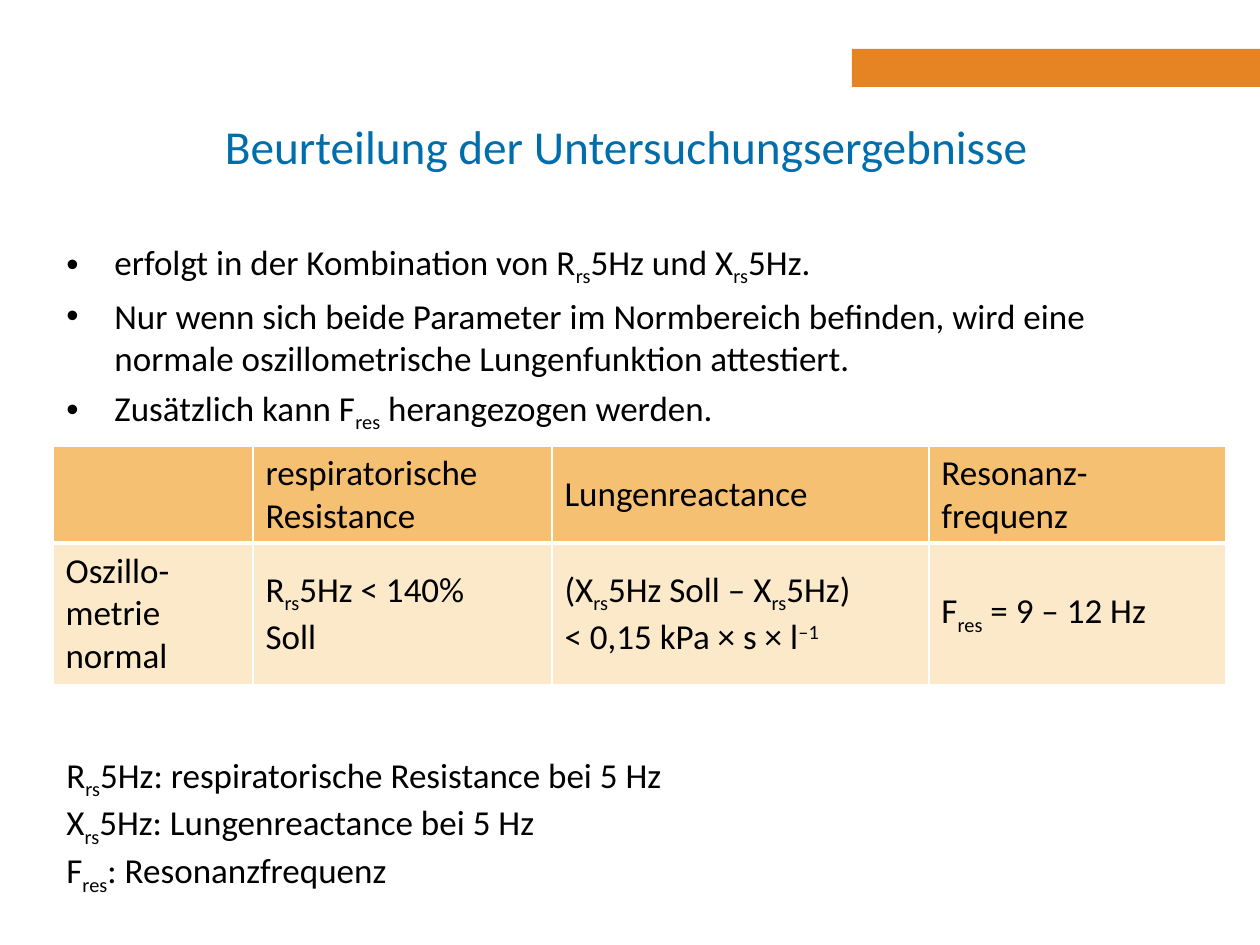
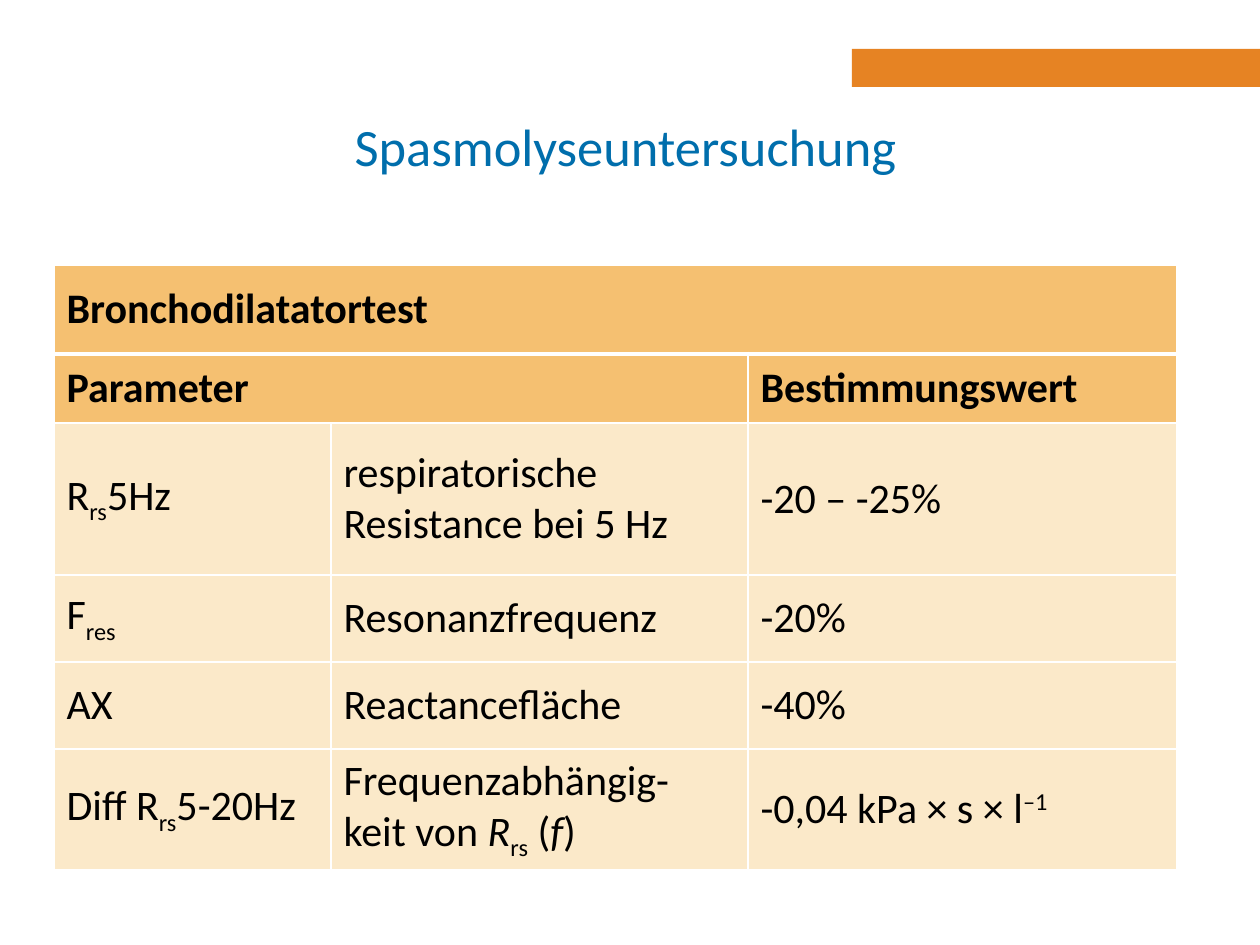
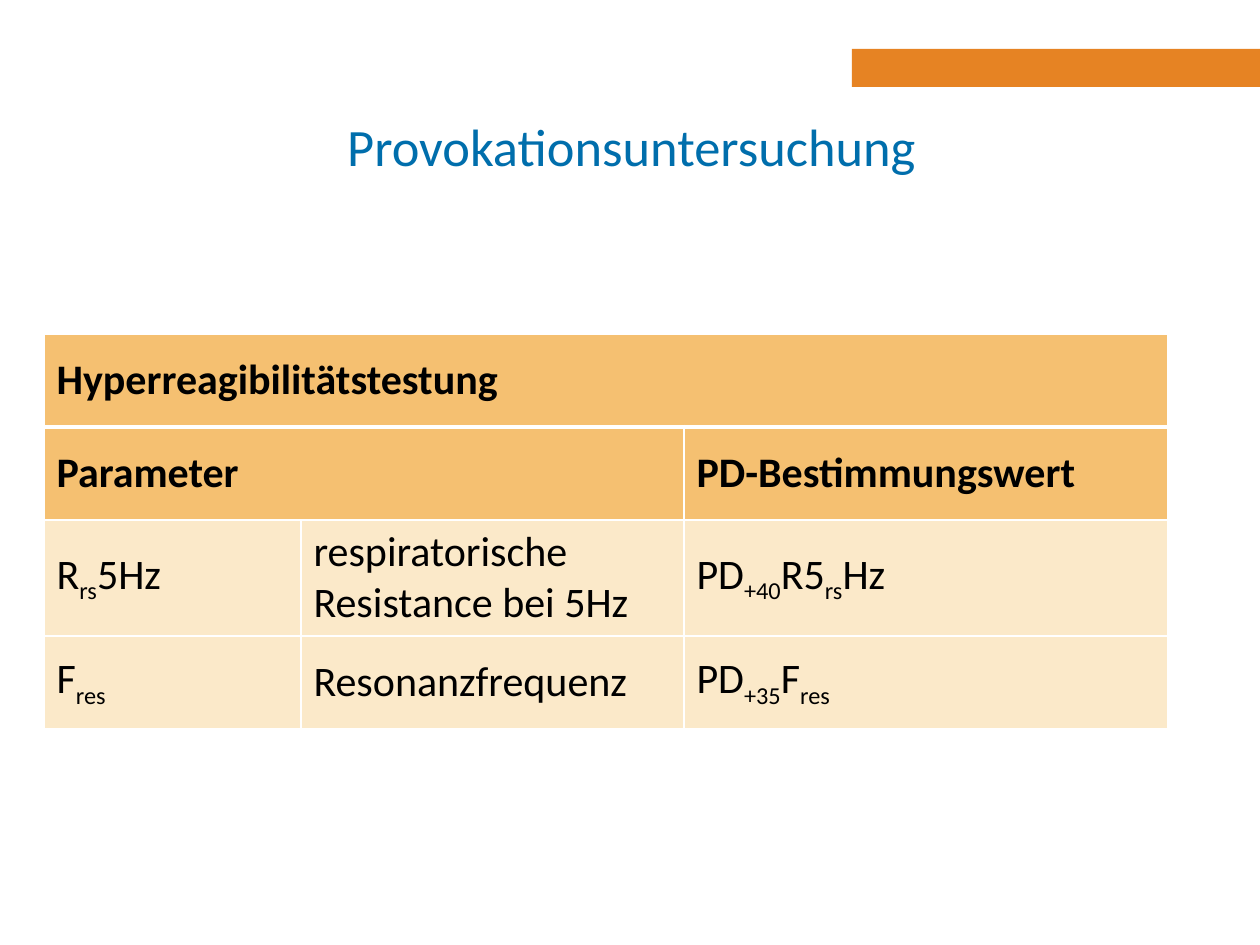
from itertools import product

from pptx import Presentation
from pptx.dml.color import RGBColor
from pptx.enum.shapes import MSO_SHAPE
from pptx.enum.text import MSO_ANCHOR, PP_ALIGN
from pptx.oxml import parse_xml
from pptx.oxml.ns import nsdecls
from pptx.util import Pt

EMU_PER_PX = 914400 / 126
FONT = "Calibri"
ORANGE, BLUE, BLACK, WHITE = "E68323", "006EAC", "000000", "FFFFFF"
HEADER_FILL, BODY_FILL = "F5C071", "FBE9C9"
SUBSCRIPT, SUPERSCRIPT, ITALIC = "~", "^", "*"
BASELINES = {SUBSCRIPT: "-25000", SUPERSCRIPT: "30000"}
BULLET_INDENT = 48
CELL_RIGHT_MARGIN = 54


def px(length):
    return round(length * EMU_PER_PX)


def color(hex_string):
    return RGBColor.from_string(hex_string)


def add_runs(paragraph, text):
    for mark in (SUBSCRIPT, SUPERSCRIPT, ITALIC):
        text = text.replace(mark, f"\n{mark}\n")
    active = None
    for piece in text.split("\n"):
        if piece in (SUBSCRIPT, SUPERSCRIPT, ITALIC):
            active = None if active == piece else piece
        elif piece:
            run = paragraph.add_run()
            run.text = piece
            if active == ITALIC:
                run.font.italic = True
            elif active:
                run._r.get_or_add_rPr().set("baseline", BASELINES[active])


def add_bullet(paragraph):
    properties = paragraph._p.get_or_add_pPr()
    properties.set("marL", str(px(BULLET_INDENT)))
    properties.set("indent", str(-px(BULLET_INDENT)))
    properties.append(parse_xml(f'<a:buFont {nsdecls("a")} typeface="Arial"/>'))
    properties.append(parse_xml(f'<a:buChar {nsdecls("a")} char="•"/>'))


def fill_text(frame, text, size, hex_color=BLACK, bold=False, align=PP_ALIGN.LEFT,
              bullets=False, gap=0):
    for index, line in enumerate(text.split("\n")):
        paragraph = frame.add_paragraph() if index else frame.paragraphs[0]
        paragraph.alignment = align
        if index and gap:
            paragraph.space_before = Pt(gap)
        if bullets:
            add_bullet(paragraph)
        paragraph.font.name = FONT
        paragraph.font.size = Pt(size)
        paragraph.font.bold = bold
        paragraph.font.color.rgb = color(hex_color)
        add_runs(paragraph, line)


def add_text(slide, box, text, size, anchor=MSO_ANCHOR.TOP, **style):
    frame = slide.shapes.add_textbox(*map(px, box)).text_frame
    frame.word_wrap = True
    frame.vertical_anchor = anchor
    fill_text(frame, text, size, **style)


def add_titled_slide(presentation, title, size):
    slide = presentation.slides.add_slide(presentation.slide_layouts[6])
    band = slide.shapes.add_shape(MSO_SHAPE.RECTANGLE, *map(px, (852, 49, 408, 38)))
    band.shadow.inherit = False
    band.fill.solid()
    band.fill.fore_color.rgb = color(ORANGE)
    band.line.fill.background()
    add_text(slide, (186, 87, 891, 117), title, size, MSO_ANCHOR.MIDDLE,
             hex_color=BLUE, align=PP_ALIGN.CENTER)
    return slide


def set_borders(cell, row):
    widths = {"L": 1, "R": 1, "T": 3 if row == 1 else 1, "B": 3 if row == 0 else 1}
    properties = cell._tc.get_or_add_tcPr()
    for side, width in widths.items():
        properties.append(parse_xml(
            f'<a:ln{side} {nsdecls("a")} w="{Pt(width)}"><a:solidFill>'
            f'<a:srgbClr val="{WHITE}"/></a:solidFill></a:ln{side}>'))


def add_grid(slide, left, top, widths, heights, rows, size, header_rows, bold_header):
    box = left, top, sum(widths), sum(heights)
    table = slide.shapes.add_table(len(heights), len(widths), *map(px, box)).table
    table.first_row = table.horz_banding = False
    for column, width in zip(table.columns, widths):
        column.width = px(width)
    for table_row, height in zip(table.rows, heights):
        table_row.height = px(height)
    for row, column in product(range(len(heights)), range(len(widths))):
        cell = table.cell(row, column)
        is_header = row < header_rows
        set_borders(cell, row)
        cell.fill.solid()
        cell.fill.fore_color.rgb = color(HEADER_FILL if is_header else BODY_FILL)
        cell.vertical_anchor = MSO_ANCHOR.MIDDLE
        if column:
            cell.margin_right = px(CELL_RIGHT_MARGIN)
        text = rows[row][column]
        if text is not None:
            fill_text(cell.text_frame, text, size, bold=is_header and bold_header)
    for row, texts in enumerate(rows):
        if None in texts:
            last = max(index for index, text in enumerate(texts) if text is None)
            table.cell(row, 0).merge(table.cell(row, last))


def add_assessment_slide(presentation):
    slide = add_titled_slide(presentation, "Beurteilung der Untersuchungsergebnisse ", 27)
    add_text(slide, (54, 234, 1134, 193),
             "erfolgt in der Kombination von R~rs~5Hz und X~rs~5Hz.\n"
             "Nur wenn sich beide Parameter im Normbereich befinden, wird eine "
             "normale oszillometrische Lungenfunktion attestiert.\n"
             "Zusätzlich kann F~res~ herangezogen werden.", 20, bullets=True, gap=4)
    add_grid(slide, 53, 446, (200, 299, 377, 297), (97, 142), [
        ("", "respiratorische\nResistance", "Lungenreactance", "Resonanz-frequenz"),
        ("Oszillo-metrie normal", "R~rs~5Hz < 140% Soll",
         "(X~rs~5Hz Soll – X~rs~5Hz)\n< 0,15 kPa × s × l^–1^", "F~res~ = 9 – 12 Hz"),
    ], 20, header_rows=1, bold_header=False)
    add_text(slide, (54, 747, 753, 140),
             "R~rs~5Hz: respiratorische Resistance bei 5 Hz\n"
             "X~rs~5Hz: Lungenreactance bei 5 Hz\n"
             "F~res~: Resonanzfrequenz", 20)


def add_test_slide(presentation, title, left, top, widths, heights, rows):
    slide = add_titled_slide(presentation, title, 30)
    add_grid(slide, left, top, widths, heights, rows, 24, header_rows=2, bold_header=True)


def main():
    presentation = Presentation()
    presentation.slide_width, presentation.slide_height = px(1260), px(945)
    add_assessment_slide(presentation)
    add_test_slide(presentation, "Spasmolyseuntersuchung ", 54, 265,
                   (277, 417, 429), (89, 69, 152, 87, 87, 120), [
        ("Bronchodilatatortest", None, None),
        ("Parameter", None, "Bestimmungswert"),
        ("R~rs~5Hz", "respiratorische Resistance bei 5 Hz", "-20 – -25%"),
        ("F~res~", "Resonanzfrequenz", "-20%"),
        ("AX", "Reactancefläche", "-40%"),
        ("Diff R~rs~5-20Hz", "Frequenzabhängig-keit von *R*~rs~ (*f*)",
         "-0,04 kPa × s × l^–1^"),
    ])
    add_test_slide(presentation, "Provokationsuntersuchung", 44, 334,
                   (257, 383, 484), (93, 93, 116, 93), [
        ("Hyperreagibilitätstestung", None, None),
        ("Parameter", None, "PD-Bestimmungswert"),
        ("R~rs~5Hz", "respiratorische Resistance bei 5Hz", "PD~+40~R5~rs~Hz"),
        ("F~res~", "Resonanzfrequenz", "PD~+35~F~res~"),
    ])
    presentation.save("out.pptx")


if __name__ == "__main__":
    main()
